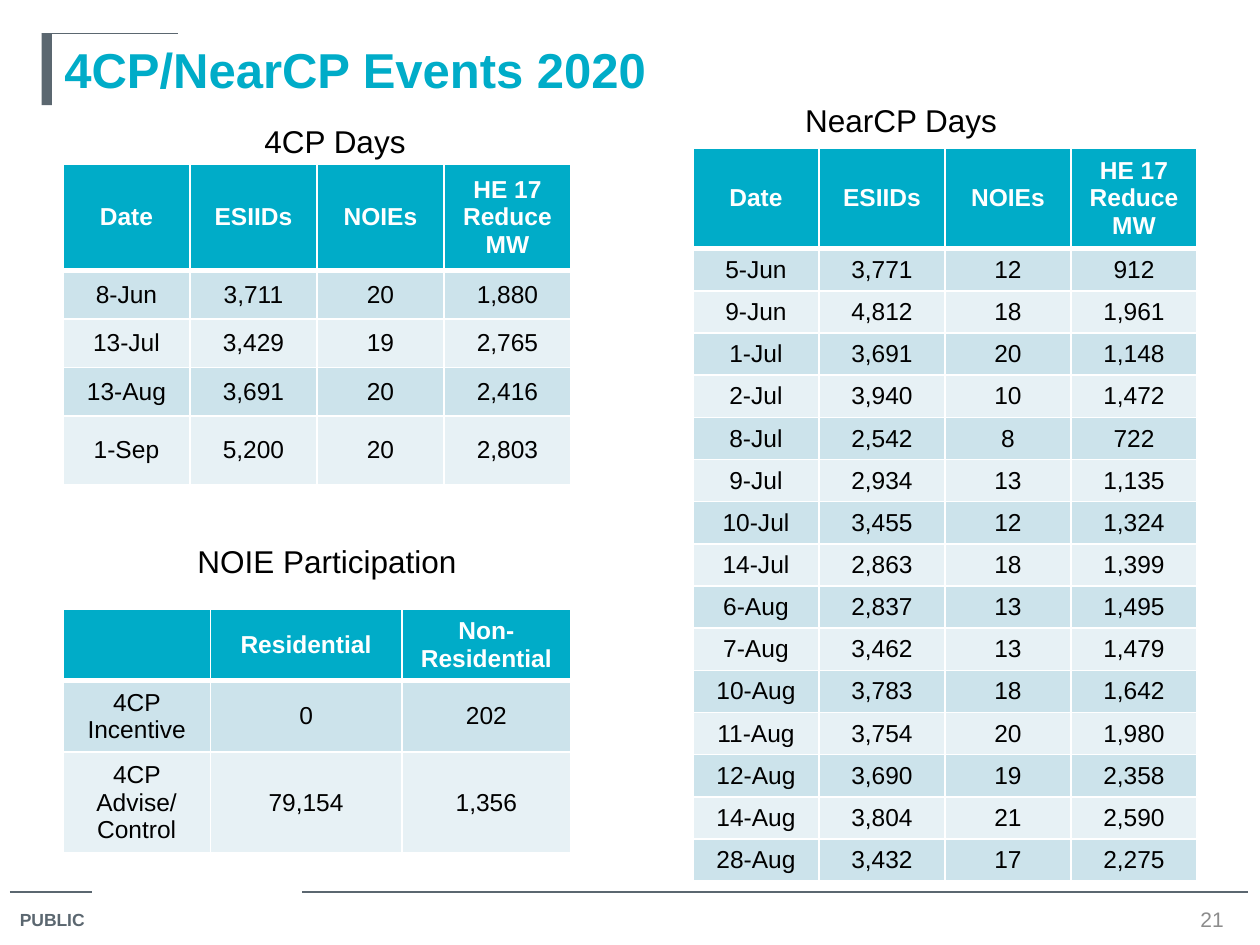
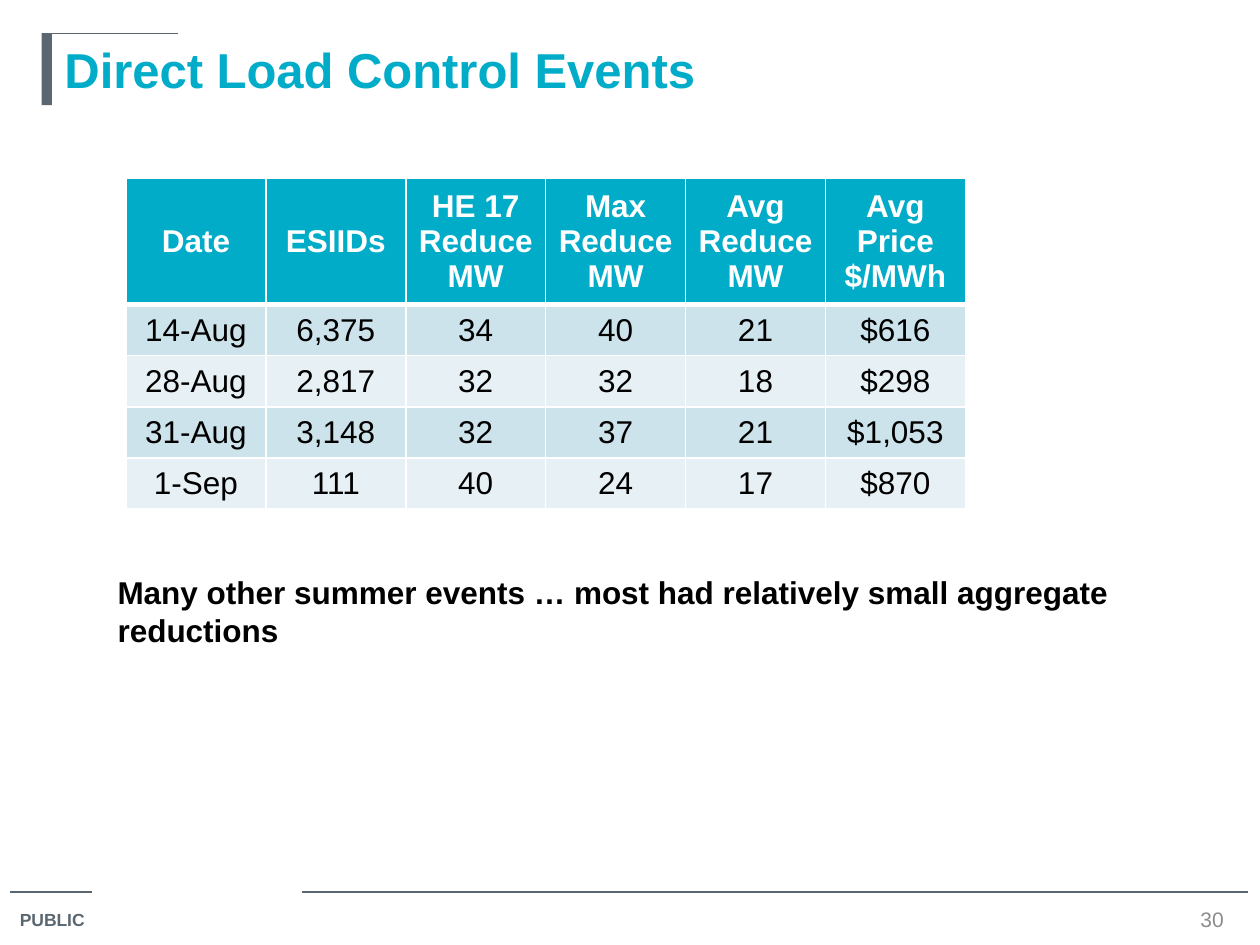
from lxml.etree import SubElement
from pptx import Presentation
from pptx.dml.color import RGBColor
from pptx.enum.shapes import MSO_CONNECTOR, MSO_SHAPE
from pptx.enum.text import MSO_ANCHOR, PP_ALIGN
from pptx.oxml.ns import qn
from pptx.util import Cm, Pt

TEAL = RGBColor(0x00, 0xAC, 0xC8)
SLATE = RGBColor(0x5B, 0x67, 0x70)
GRAY = RGBColor(0x8C, 0x8C, 0x8C)
BLACK = RGBColor(0x00, 0x00, 0x00)
WHITE = RGBColor(0xFF, 0xFF, 0xFF)
BANDS = (RGBColor(0xCC, 0xE3, 0xEB), RGBColor(0xE7, 0xF1, 0xF5))
FONT = "Arial"

DAY_HEADER = ("Date", "ESIIDs", "NOIEs", "HE 17 Reduce MW")
FOUR_CP_DAYS = [
    DAY_HEADER,
    ("8-Jun", "3,711", "20", "1,880"),
    ("13-Jul", "3,429", "19", "2,765"),
    ("13-Aug", "3,691", "20", "2,416"),
    ("1-Sep", "5,200", "20", "2,803"),
]
NEAR_CP_DAYS = [
    DAY_HEADER,
    ("5-Jun", "3,771", "12", "912"),
    ("9-Jun", "4,812", "18", "1,961"),
    ("1-Jul", "3,691", "20", "1,148"),
    ("2-Jul", "3,940", "10", "1,472"),
    ("8-Jul", "2,542", "8", "722"),
    ("9-Jul", "2,934", "13", "1,135"),
    ("10-Jul", "3,455", "12", "1,324"),
    ("14-Jul", "2,863", "18", "1,399"),
    ("6-Aug", "2,837", "13", "1,495"),
    ("7-Aug", "3,462", "13", "1,479"),
    ("10-Aug", "3,783", "18", "1,642"),
    ("11-Aug", "3,754", "20", "1,980"),
    ("12-Aug", "3,690", "19", "2,358"),
    ("14-Aug", "3,804", "21", "2,590"),
    ("28-Aug", "3,432", "17", "2,275"),
]
NOIE_PARTICIPATION = [
    ("", "Residential", "Non-Residential"),
    ("4CP Incentive", "0", "202"),
    ("4CP Advise/\nControl", "79,154", "1,356"),
]
LOAD_CONTROL_EVENTS = [
    ("Date", "ESIIDs", "HE 17 Reduce MW", "Max Reduce MW", "Avg Reduce MW", "Avg Price $/MWh"),
    ("14-Aug", "6,375", "34", "40", "21", "$616"),
    ("28-Aug", "2,817", "32", "32", "18", "$298"),
    ("31-Aug", "3,148", "32", "37", "21", "$1,053"),
    ("1-Sep", "111", "40", "24", "17", "$870"),
]


def add_run(paragraph, text, size, color, bold=False):
    run = paragraph.add_run()
    run.text = text
    run.font.name = FONT
    run.font.size = Pt(size)
    run.font.bold = bold
    run.font.color.rgb = color


def add_text(slide, box, text, size, color=BLACK, bold=False,
             align=PP_ALIGN.LEFT, anchor=MSO_ANCHOR.TOP):
    shape = slide.shapes.add_textbox(*(Cm(length) for length in box))
    frame = shape.text_frame
    frame.word_wrap = True
    frame.vertical_anchor = anchor
    paragraph = frame.paragraphs[0]
    paragraph.alignment = align
    add_run(paragraph, text, size, color, bold)


def add_rule(slide, left, right, top):
    rule = slide.shapes.add_connector(
        MSO_CONNECTOR.STRAIGHT, Cm(left), Cm(top), Cm(right), Cm(top))
    rule.line.color.rgb = SLATE
    rule.line.width = Pt(0.75)
    SubElement(rule._element.spPr, qn("a:effectLst"))


def add_title(slide, left, top, title):
    height = 1.45
    bar = slide.shapes.add_shape(
        MSO_SHAPE.RECTANGLE, Cm(left), Cm(top), Cm(0.21), Cm(height))
    bar.shadow.inherit = False
    bar.fill.solid()
    bar.fill.fore_color.rgb = SLATE
    bar.line.fill.background()
    add_rule(slide, left, left + 2.75, top)
    add_text(slide, (left + 0.21, top, 23.5, height), title, 28, TEAL, True,
             anchor=MSO_ANCHOR.MIDDLE)


def add_footer(slide, top, number):
    add_rule(slide, 0.2, 1.86, top)
    add_rule(slide, 6.09, 25.15, top)
    add_text(slide, (0.15, top + 0.23, 1.97, 0.7), "PUBLIC", 10, SLATE, True)
    add_text(slide, (23.7, top + 0.25, 1.47, 0.61), number, 12, GRAY,
             align=PP_ALIGN.CENTER, anchor=MSO_ANCHOR.MIDDLE)


def set_borders(cell, top, bottom):
    properties = cell._tc.get_or_add_tcPr()
    for side, width in (("L", 1), ("R", 1), ("T", top), ("B", bottom)):
        line = SubElement(properties, qn(f"a:ln{side}"), w=str(Pt(width)))
        fill = SubElement(line, qn("a:solidFill"))
        SubElement(fill, qn("a:srgbClr"), val=str(WHITE))


def fill_cell(cell, text, row, size):
    is_header = row == 0
    # The heavy rule lies between the header and the first body row
    set_borders(cell, top=3 if row == 1 else 1, bottom=3 if is_header else 1)
    cell.fill.solid()
    cell.fill.fore_color.rgb = TEAL if is_header else BANDS[(row - 1) % 2]
    cell.vertical_anchor = MSO_ANCHOR.MIDDLE
    for index, line in enumerate(text.split("\n") if text else []):
        frame = cell.text_frame
        paragraph = frame.add_paragraph() if index else frame.paragraphs[0]
        paragraph.alignment = PP_ALIGN.CENTER
        add_run(paragraph, line, size, WHITE if is_header else BLACK, is_header)


def add_data_table(slide, left, top, rows, widths, heights, size=14):
    table = slide.shapes.add_table(
        len(rows), len(widths), Cm(left), Cm(top),
        Cm(sum(widths)), Cm(sum(heights))).table
    for column, width in zip(table.columns, widths):
        column.width = Cm(width)
    for index, (values, height) in enumerate(zip(rows, heights)):
        table.rows[index].height = Cm(height)
        for column, text in enumerate(values):
            fill_cell(table.cell(index, column), text, index, size)


def add_base_slide(presentation, title, number):
    slide = presentation.slides.add_slide(presentation.slide_layouts[6])
    add_footer(slide, 17.98, number)
    add_title(slide, 0.84, 0.67, title)
    return slide


def build_cp_events(presentation):
    slide = add_base_slide(presentation, "4CP/NearCP Events 2020", "21")
    # Table captions
    add_text(slide, (5.08, 2.34, 3.4, 1.02), "4CP Days", 18)
    add_text(slide, (15.98, 1.91, 4.45, 1.02), "NearCP Days", 18)
    add_text(slide, (3.73, 10.8, 6.2, 1.02), "NOIE Participation", 18)
    # Tables
    add_data_table(slide, 1.27, 3.31, FOUR_CP_DAYS, [2.56] * 4,
                   [2.14] + [0.98] * 3 + [1.38])
    add_data_table(slide, 13.97, 2.98, NEAR_CP_DAYS, [2.54] * 4,
                   [2.01] + [0.85] * 15)
    add_data_table(slide, 1.27, 12.28, NOIE_PARTICIPATION, [2.97, 3.86, 3.41],
                   [1.43, 1.43, 2.03])


def build_load_control(presentation):
    slide = add_base_slide(presentation, "Direct Load Control Events", "30")
    add_text(slide, (2.12, 11.43, 21.17, 1.8),
             "Many other summer events … most had relatively small aggregate reductions",
             18, bold=True)
    add_data_table(slide, 2.54, 3.6, LOAD_CONTROL_EVENTS, [2.82] * 6,
                   [2.53] + [1.03] * 4, size=18)


def main():
    presentation = Presentation()
    presentation.slide_width = Cm(25.4)
    presentation.slide_height = Cm(19.05)
    build_cp_events(presentation)
    build_load_control(presentation)
    presentation.save("out.pptx")


if __name__ == "__main__":
    main()
